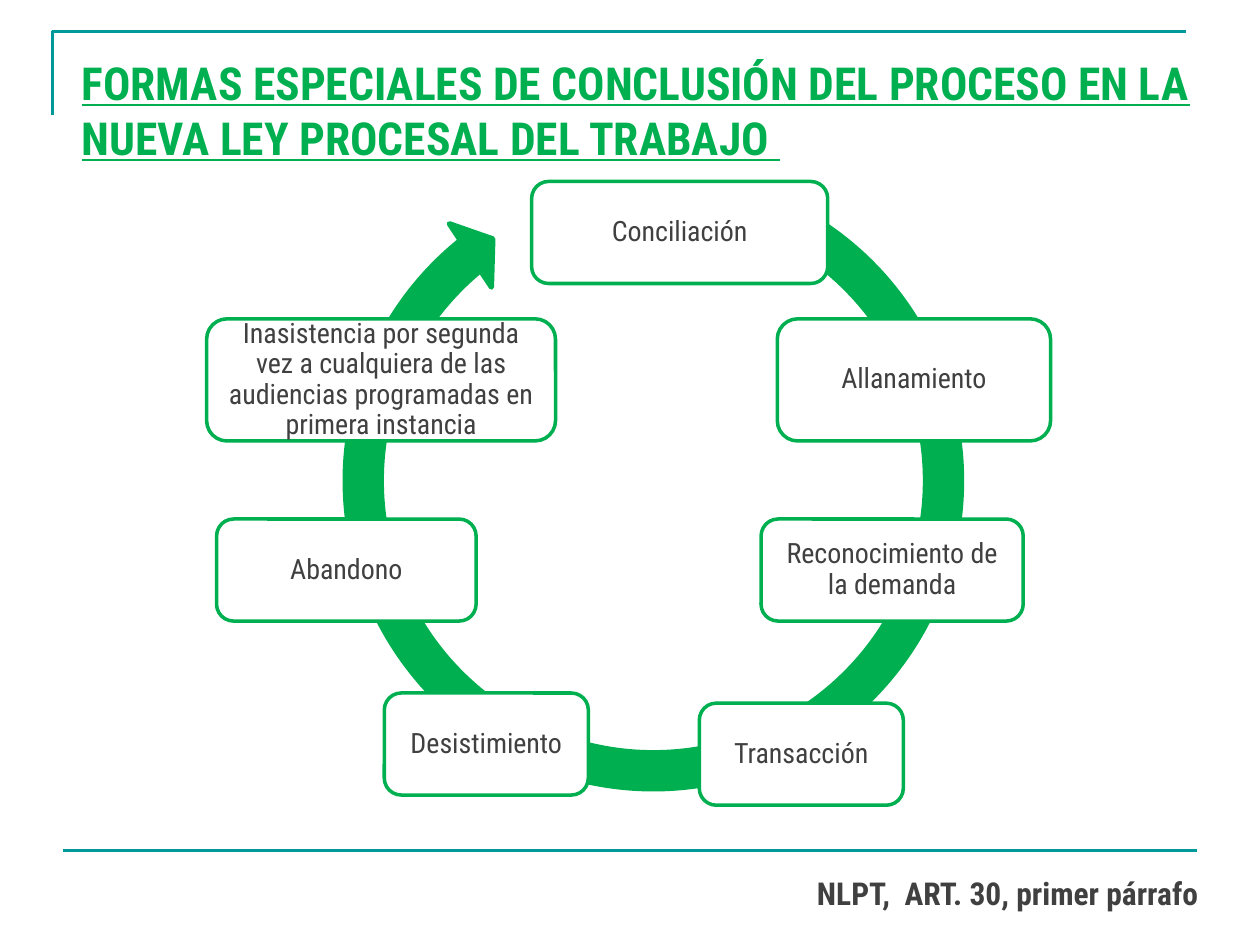
"""Slide with the cycle of special ways of ending proceedings under the labour procedure law."""
from lxml import etree
from pptx import Presentation
from pptx.dml.color import RGBColor
from pptx.enum import shapes, text
from pptx.oxml import ns
from pptx.util import Pt

GREEN, TEAL, GREY, WHITE = "00B050", "009999", "404040", "FFFFFF"
FONT = "Roboto Condensed"
TITLE = "FORMAS ESPECIALES DE CONCLUSIÓN DEL PROCESO EN LA NUEVA LEY PROCESAL DEL TRABAJO "
FOOTER = "NLPT,  ART. 30, primer párrafo"
LOW, TALL = 58.3, 69.8
STEPS = [
    ("Conciliación", 303.8, 103.7, 169.2, LOW),
    ("Allanamiento", 444.2, 182.2, 156.2, TALL),
    ("Reconocimiento de la demanda", 434.9, 296.6, 149.8, LOW),
    ("Transacción", 399.6, 401.8, 116.6, LOW),
    ("Desistimiento", 219.6, 396, 116.6, LOW),
    ("Abandono", 123.8, 296.6, 148.3, LOW),
    ("Inasistencia por segunda vez a cualquiera de las audiencias programadas en primera instancia",
     118.1, 182.2, 199.4, TALL),
]
RING = (185.8, 87.1, 375.1, 375.1)
RING_ADJUSTMENTS = (0.055, 3.307, 138.542, 173.385, 0.058)


def rgb(color):
    return RGBColor.from_string(color)


def write(sp, words, size=16, color=GREY, bold=False, underline=False, align="CENTER",
          anchor="MIDDLE", spacing=None, inset=None):
    tf = sp.text_frame
    tf.word_wrap = True
    tf.vertical_anchor = text.MSO_ANCHOR[anchor]
    if inset is not None:
        tf.margin_left = tf.margin_right = tf.margin_top = tf.margin_bottom = Pt(inset)
    p = tf.paragraphs[0]
    p.alignment = text.PP_ALIGN[align]
    p.line_spacing = spacing
    r = p.add_run()
    r.text = words
    r.font.name, r.font.size, r.font.color.rgb = FONT, Pt(size), rgb(color)
    r.font.bold, r.font.underline = bold, underline


def style(sp, line, width, fill=None):
    sp.shadow.inherit = False
    sp.line.color.rgb, sp.line.width = rgb(line), Pt(width)
    if fill:
        sp.fill.solid()
        sp.fill.fore_color.rgb = rgb(fill)
    else:
        sp.fill.background()


def add_shape(s, kind, box, **look):
    sp = s.shapes.add_shape(shapes.MSO_SHAPE[kind], *map(Pt, box))
    style(sp, **look)
    return sp


def add_frame(s):
    builder = s.shapes.build_freeform(Pt(30), Pt(66))
    builder.add_line_segments([(Pt(30), Pt(18)), (Pt(678), Pt(18))], close=False)
    style(builder.convert_to_shape(), TEAL, 1.5)
    rule = s.shapes.add_connector(shapes.MSO_CONNECTOR.STRAIGHT, Pt(36), Pt(486), Pt(684), Pt(486))
    rule.line.color.rgb, rule.line.width = rgb(TEAL), Pt(1.5)
    etree.SubElement(rule._element.spPr, ns.qn("a:effectLst"))


def main():
    prs = Presentation()
    prs.slide_width, prs.slide_height = Pt(720), Pt(540)
    s = prs.slides.add_slide(prs.slide_layouts[6])
    add_frame(s)
    write(s.shapes.add_textbox(Pt(39.6), Pt(28), Pt(666), Pt(62.6)), TITLE, size=26, color=GREEN,
          bold=True, underline=True, align="LEFT", anchor="TOP")
    write(s.shapes.add_textbox(Pt(371.5), Pt(495.4), Pt(320.4), Pt(33.8)), FOOTER, size=18,
          bold=True, align="RIGHT", spacing=0.8)
    ring = add_shape(s, "CIRCULAR_ARROW", RING, line=GREEN, width=3, fill=GREEN)
    for i, value in enumerate(RING_ADJUSTMENTS):
        ring.adjustments[i] = value
    for name, *box in STEPS:
        sp = add_shape(s, "ROUNDED_RECTANGLE", box, line=GREEN, width=2, fill=WHITE)
        write(sp, name, spacing=0.9, inset=5)
    prs.save("out.pptx")


if __name__ == "__main__":
    main()
